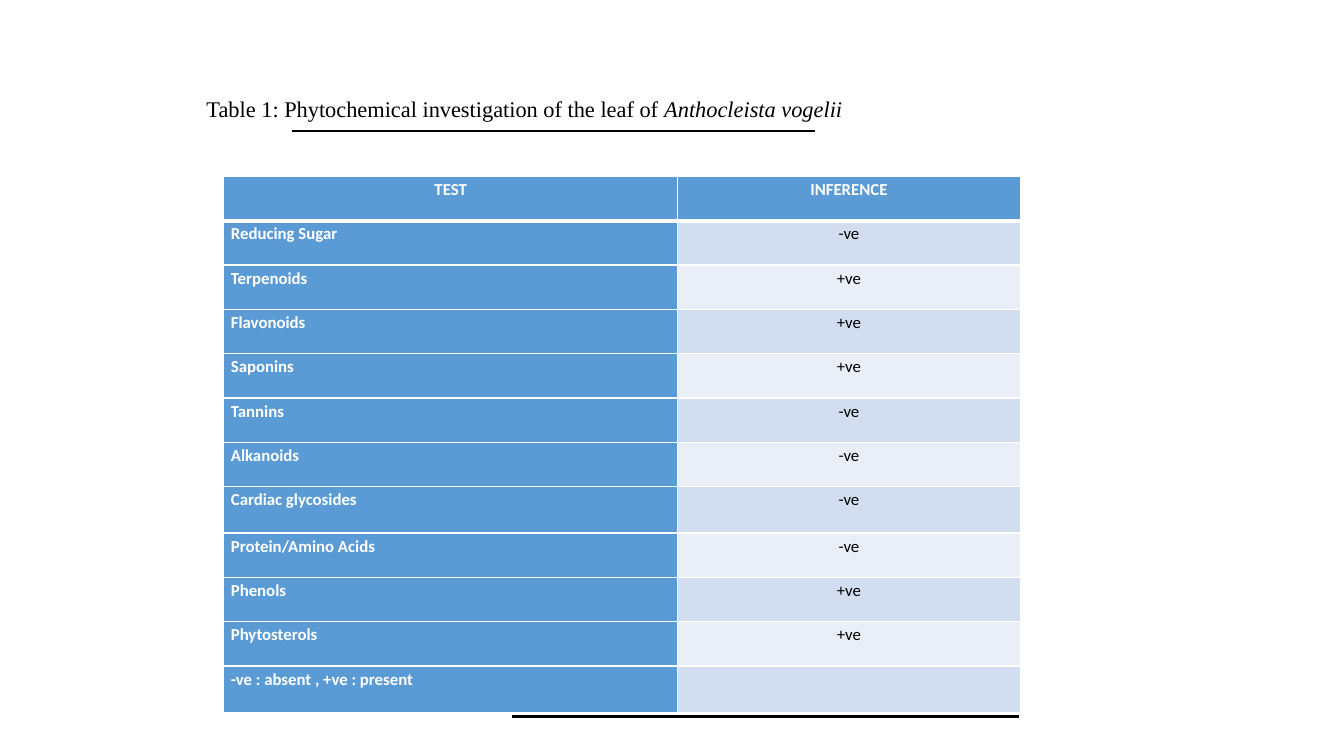
"""Build the slide with the phytochemical results table."""
import lxml.etree
import pptx
import pptx.dml.color
import pptx.enum.shapes
import pptx.enum.text
import pptx.oxml
import pptx.oxml.ns
import pptx.util

Inches = pptx.util.Inches
Pt = pptx.util.Pt
Align = pptx.enum.text.PP_ALIGN

THEME = {
    "blue": "5B9BD5", "bands": ("D2DEEF", "EAEFF7"), "white": "FFFFFF", "black": "000000",
    "table font": "Calibri", "table size": 12,
    "caption font": "Times New Roman", "caption size": 16,
    "border": 1, "header border": 3, "rule": 1.75,
}
RESULTS = [
    ("TEST", "INFERENCE"),
    ("Reducing Sugar", "-ve"),
    ("Terpenoids", "+ve"),
    ("Flavonoids", "+ve"),
    ("Saponins", "+ve"),
    ("Tannins", "-ve"),
    ("Alkanoids", "-ve"),
    ("Cardiac glycosides", "-ve"),
    ("Protein/Amino Acids", "-ve"),
    ("Phenols", "+ve"),
    ("Phytosterols", "+ve"),
    ("-ve : absent , +ve : present", ""),
]
COLUMN_WIDTHS = (4.5, 3.4)
ROW_HEIGHT, TALL_ROW_HEIGHT, TALL_ROWS = 0.44, 0.46, (7, 11)
RULES = [(2.9, 8.08, 1.3), (5.08, 10.11, 7.11)]


def add_run(paragraph, text, font, size, color, bold=False, italic=False):
    run = paragraph.add_run()
    run.text = text
    run.font.name = font
    run.font.size = Pt(size)
    run.font.bold = bold
    run.font.italic = italic
    run.font.color.rgb = pptx.dml.color.RGBColor.from_string(color)


def set_borders(cell, widths):
    properties = cell._tc.get_or_add_tcPr()
    for index, (side, width) in enumerate(widths.items()):
        properties.insert(index, pptx.oxml.parse_xml(
            f'<a:ln{side} {pptx.oxml.ns.nsdecls("a")} w="{Pt(width)}"><a:solidFill>'
            f'<a:srgbClr val="{THEME["white"]}"/></a:solidFill></a:ln{side}>'))


presentation = pptx.Presentation()
presentation.slide_width = Inches(13.33)
presentation.slide_height = Inches(7.5)
slide = presentation.slides.add_slide(presentation.slide_layouts[6])

heights = [TALL_ROW_HEIGHT if row in TALL_ROWS else ROW_HEIGHT for row in range(len(RESULTS))]
table = slide.shapes.add_table(
    len(RESULTS), len(COLUMN_WIDTHS), Inches(2.22), Inches(1.75),
    Inches(sum(COLUMN_WIDTHS)), Inches(sum(heights))).table
for column, width in zip(table.columns, COLUMN_WIDTHS):
    column.width = Inches(width)

for row, texts in enumerate(RESULTS):
    table.rows[row].height = Inches(heights[row])
    for column, text in enumerate(texts):
        cell = table.cell(row, column)
        heading = row == 0 or column == 0
        fill = THEME["blue"] if heading else THEME["bands"][(row - 1) % 2]
        cell.fill.solid()
        cell.fill.fore_color.rgb = pptx.dml.color.RGBColor.from_string(fill)
        cell.margin_left = cell.margin_right = Inches(0.07)
        cell.margin_top = cell.margin_bottom = 0
        set_borders(cell, {
            "L": THEME["border"], "R": THEME["border"],
            "T": THEME["header border" if row == 1 else "border"],
            "B": THEME["header border" if row == 0 else "border"]})
        paragraph = cell.text_frame.paragraphs[0]
        paragraph.line_spacing = 1.15
        paragraph.alignment = Align.CENTER if row == 0 or column == 1 else Align.LEFT
        if text:
            add_run(paragraph, text, THEME["table font"], THEME["table size"],
                    THEME["white" if heading else "black"], bold=heading)

for left, right, top in RULES:
    rule = slide.shapes.add_connector(
        pptx.enum.shapes.MSO_CONNECTOR.STRAIGHT,
        Inches(left), Inches(top), Inches(right), Inches(top))
    rule.line.color.rgb = pptx.dml.color.RGBColor.from_string(THEME["black"])
    rule.line.width = Pt(THEME["rule"])
    lxml.etree.SubElement(rule._element.spPr, pptx.oxml.ns.qn("a:effectLst"))

caption = slide.shapes.add_textbox(Inches(1.95), Inches(0.89), Inches(7.43), Inches(0.37))
frame = caption.text_frame
frame.word_wrap = True
frame.auto_size = pptx.enum.text.MSO_AUTO_SIZE.SHAPE_TO_FIT_TEXT
frame.vertical_anchor = pptx.enum.text.MSO_ANCHOR.MIDDLE
paragraph = frame.paragraphs[0]
paragraph.alignment = Align.JUSTIFY
for text, italic in [("Table 1: Phytochemical investigation of the leaf of ", False),
                     ("Anthocleista vogelii", True)]:
    add_run(paragraph, text, THEME["caption font"], THEME["caption size"],
            THEME["black"], italic=italic)

presentation.save("out.pptx")
